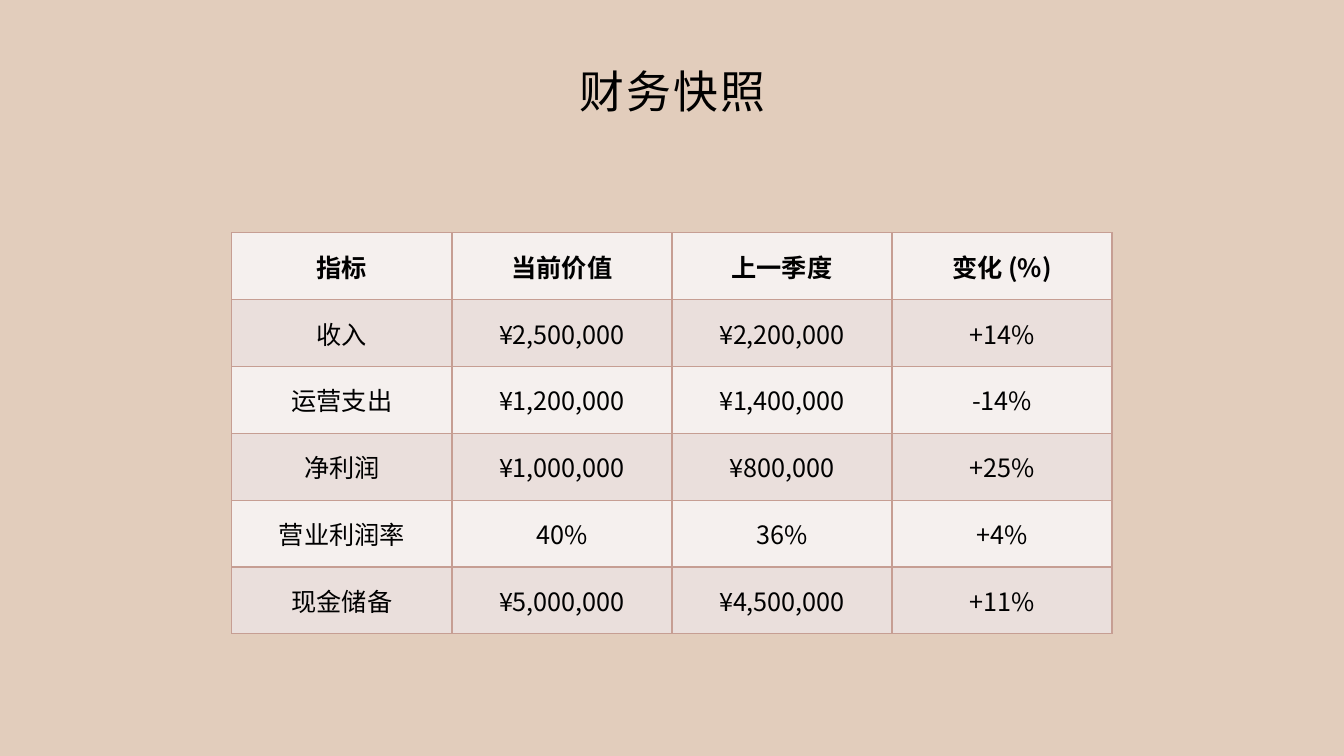
"""Build a slide with a table of quarterly financial figures."""
from lxml.etree import SubElement
from pptx import Presentation
from pptx.dml.color import RGBColor
from pptx.enum.text import MSO_ANCHOR as Anchor, PP_ALIGN as Align
from pptx.oxml.ns import qn
from pptx.util import Inches, Pt

FONT = "Noto Sans CJK SC"
BORDER = "C69E93"
BANDS = ["F5F0EE", "EADFDC"]
ROWS = [
    ["指标", "当前价值", "上一季度", "变化 (%)"],
    ["收入", "¥2,500,000", "¥2,200,000", "+14%"],
    ["运营支出", "¥1,200,000", "¥1,400,000", "-14%"],
    ["净利润", "¥1,000,000", "¥800,000", "+25%"],
    ["营业利润率", "40%", "36%", "+4%"],
    ["现金储备", "¥5,000,000", "¥4,500,000", "+11%"],
]


def paint(fill, color):
    fill.solid()
    fill.fore_color.rgb = RGBColor.from_string(color)


def write(frame, text, size, bold=False):
    para = frame.paragraphs[0]
    para.alignment = Align.CENTER
    span = para.add_run()
    span.text = text
    for name, value in {"name": FONT, "size": Pt(size), "bold": bold}.items():
        setattr(span.font, name, value)
    paint(span.font.fill, "000000")
    SubElement(span.font._element, qn("a:ea"), typeface=FONT)
    return para, span


deck = Presentation()
deck.slide_width, deck.slide_height = Inches(13.33), Inches(7.5)
page = deck.slides.add_slide(deck.slide_layouts[6])
paint(page.background.fill, "E2CDBC")

title = page.shapes.add_textbox(Inches(0.95), 0, Inches(11.44), Inches(1.87))
title.text_frame.word_wrap = True
title.text_frame.vertical_anchor = Anchor.MIDDLE
para, span = write(title.text_frame, "财务快照", 32)
para.line_spacing = 0.9
span.font._element.set("spc", "150")

table = page.shapes.add_table(
    len(ROWS), len(ROWS[0]), Inches(2.3), Inches(2.31), Inches(8.73), Inches(3.98)
).table

for row, values in enumerate(ROWS):
    for column, text in enumerate(values):
        cell = table.cell(row, column)
        cell.vertical_anchor = Anchor.MIDDLE
        write(cell.text_frame, text, 18, bold=row == 0)
        properties = cell._tc.get_or_add_tcPr()
        for side in "LRTB":
            line = SubElement(properties, qn(f"a:ln{side}"), w=str(Pt(1)))
            SubElement(SubElement(line, qn("a:solidFill")), qn("a:srgbClr"), val=BORDER)
        paint(cell.fill, BANDS[row % 2])

deck.save("out.pptx")
